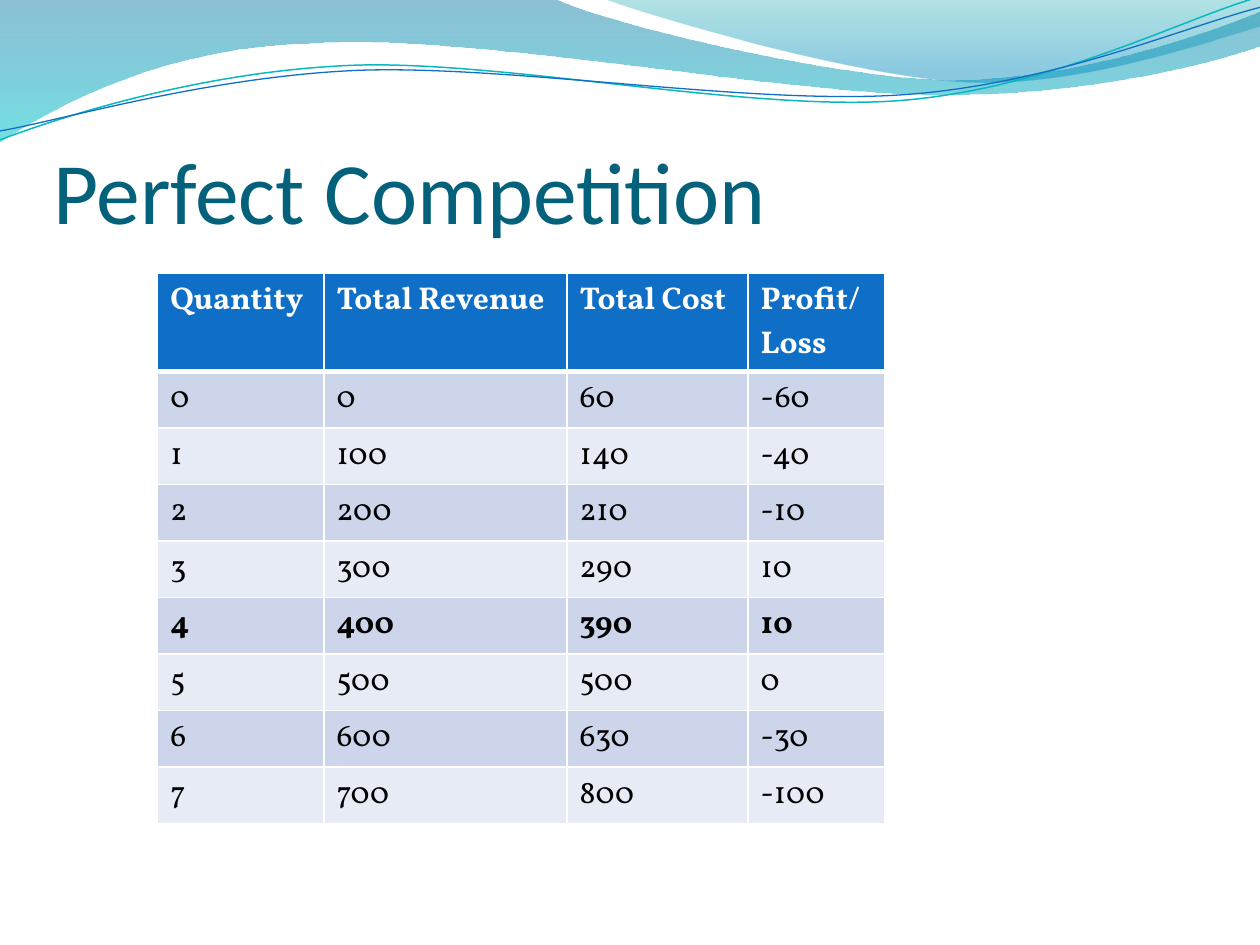
from dataclasses import dataclass
from itertools import chain

from lxml.etree import SubElement
from pptx import Presentation
from pptx.dml.color import RGBColor as RGB
from pptx.enum.text import MSO_ANCHOR as Anchor
from pptx.oxml.ns import qn
from pptx.util import Cm, Pt


@dataclass(frozen=True)
class Theme:
    title: str = "04617B"
    accent: str = "0F6FC6"
    aqua: str = "0AB8BF"
    white: str = "FFFFFF"
    ink: str = "000000"
    bands: tuple = ("CCD5EA", "E7EBF5")
    back_wave: tuple = ((0, "0074A1", 45), (1, "00C6CF", 55))
    front_wave: tuple = ((0, "00A1A9", 30), (0.8, "008BBF", 45))
    heading_font: str = "Calibri"
    body_font: str = "Vollkorn"
    heading_size: int = 50
    body_size: int = 18


THEME = Theme()

BACK_WAVE = [
    [(0, 0)], [(11.18, -0.03)],
    [(12.09, 0.43), (16.87, 1.6), (19.25, 1.6)],
    [(21.67, 1.6), (24.33, 0.66), (25.4, 0.23)],
    [(25.43, 0.91)],
    [(24.97, 1.12), (22.1, 1.93), (18.95, 1.91)],
    [(15.8, 1.91), (9.7, 0.71), (6.53, 0.86)],
    [(3.28, 0.91), (1.17, 2.11), (-0.03, 2.87)],
]
FRONT_WAVE = [
    [(12.17, -0.03)],
    [(12.93, 0.28), (17.32, 1.57), (19.53, 1.65)],
    [(21.74, 1.75), (24.41, 0.81), (25.4, 0.53)],
    [(25.4, 0)],
]
AQUA_STRAND = [
    [(0, 2.82)],
    [(1.22, 2.36), (4.01, 1.45), (7.04, 1.32)],
    [(10.03, 1.19), (15.06, 2.26), (18.11, 2.03)],
    [(21.16, 1.8), (23.83, 0.38), (25.35, -0.05)],
]
BLUE_STRAND = [
    [(0, 2.64)],
    [(1.19, 2.44), (4.17, 1.55), (7.19, 1.42)],
    [(10.24, 1.3), (15.16, 2.13), (18.21, 1.91)],
    [(21.23, 1.7), (23.9, 0.53), (25.4, 0.15)],
]

HEADINGS = ("Quantity", "Total Revenue", "Total Cost", "Profit/Loss")
RESULTS = [
    (0, 0, 60, -60), (1, 100, 140, -40), (2, 200, 210, -10),
    (3, 300, 290, 10), (4, 400, 390, 10), (5, 500, 500, 0),
    (6, 600, 630, -30), (7, 700, 800, -100),
]
BEST_QUANTITY = 4
COLUMN_WIDTHS = (3.35, 4.9, 3.65, 2.75)
HEADER_HEIGHT, ROW_HEIGHT = 1.98, 1.14


def style_text(frame, text, **font_values):
    paragraph = frame.paragraphs[0]
    run = paragraph.add_run()
    run.text = text
    color = font_values.pop("color")
    for key, value in font_values.items():
        setattr(run.font, key, value)
    run.font.color.rgb = RGB.from_string(color)


def add_curve(slide, left, top, segments, closed):
    points = [(x * 100, y * 100) for x, y in chain.from_iterable(segments)]
    builder = slide.shapes.build_freeform(*points[0], scale=Cm(0.01))
    builder.add_line_segments(points[1:], close=closed)
    curve = builder.convert_to_shape(Cm(left), Cm(top))
    curve.shadow.inherit = False
    steps = iter(list(curve.element.iter(qn("a:lnTo"))))
    for segment in segments[1:]:
        first, *rest = [next(steps) for _ in segment]
        if rest:
            first.tag = qn("a:cubicBezTo")
            for step in rest:
                first.append(step[0])
                step.getparent().remove(step)
    return curve


def add_wave(slide, left, top, segments, stops):
    wave = add_curve(slide, left, top, segments, True)
    wave.line.fill.background()
    wave.fill.gradient()
    wave.fill.gradient_angle = 270
    for stop, (position, color, _) in zip(wave.fill.gradient_stops, stops):
        stop.position = position
        stop.color.rgb = RGB.from_string(color)
    for tint, (_, _, opacity) in zip(wave.element.spPr.iter(qn("a:srgbClr")), stops):
        SubElement(tint, qn("a:alpha"), val=str(opacity * 1000))


def add_strand(slide, left, top, segments, color, width):
    strand = add_curve(slide, left, top, segments, False)
    strand.fill.background()
    strand.line.color.rgb = RGB.from_string(color)
    strand.line.width = Pt(width)


def add_wave_header(slide, left, top):
    add_wave(slide, left, top, BACK_WAVE, THEME.back_wave)
    add_wave(slide, left, top, FRONT_WAVE, THEME.front_wave)
    add_strand(slide, left, top, AQUA_STRAND, THEME.aqua, 0.85)
    add_strand(slide, left, top, BLUE_STRAND, THEME.accent, 0.75)


def add_title(slide, left, top, width, height):
    title = slide.shapes.add_textbox(Cm(left), Cm(top), Cm(width), Cm(height))
    frame = title.text_frame
    settings = {
        "word_wrap": True, "vertical_anchor": Anchor.BOTTOM, "margin_left": 0,
        "margin_top": Cm(0.13), "margin_right": 0, "margin_bottom": 0,
    }
    for key, value in settings.items():
        setattr(frame, key, value)
    style_text(frame, "Perfect Competition", name=THEME.heading_font,
               size=Pt(THEME.heading_size), color=THEME.title)


def set_borders(cell, top, bottom):
    properties = cell._tc.get_or_add_tcPr()
    for side, width in {"L": 1, "R": 1, "T": top, "B": bottom}.items():
        border = SubElement(properties, qn(f"a:ln{side}"), w=str(Pt(width)))
        solid = SubElement(border, qn("a:solidFill"))
        SubElement(solid, qn("a:srgbClr"), val=THEME.white)


def add_profit_table(slide, left, top):
    rows = [HEADINGS, *RESULTS]
    width = sum(COLUMN_WIDTHS)
    height = HEADER_HEIGHT + ROW_HEIGHT * len(RESULTS)
    table = slide.shapes.add_table(
        len(rows), len(HEADINGS), Cm(left), Cm(top), Cm(width), Cm(height)).table
    for column, column_width in zip(table.columns, COLUMN_WIDTHS):
        column.width = Cm(column_width)
    for index, values in enumerate(rows):
        heading = index == 0
        table.rows[index].height = Cm(HEADER_HEIGHT if heading else ROW_HEIGHT)
        fill = THEME.accent if heading else THEME.bands[(index - 1) % 2]
        for cell, value in zip(table.rows[index].cells, values):
            set_borders(cell, 3 if index == 1 else 1, 3 if heading else 1)
            cell.fill.solid()
            cell.fill.fore_color.rgb = RGB.from_string(fill)
            style_text(cell.text_frame, str(value), name=THEME.body_font,
                       size=Pt(THEME.body_size),
                       bold=heading or values[0] == BEST_QUANTITY,
                       color=THEME.white if heading else THEME.ink)


def main():
    deck = Presentation()
    deck.slide_width, deck.slide_height = Cm(25.4), Cm(19.05)
    slide = deck.slides.add_slide(deck.slide_layouts[6])
    add_wave_header(slide, 0, 0)
    add_title(slide, 1.07, 1.7, 22.86, 3.18)
    add_profit_table(slide, 3.18, 5.51)
    deck.save("out.pptx")


if __name__ == "__main__":
    main()
